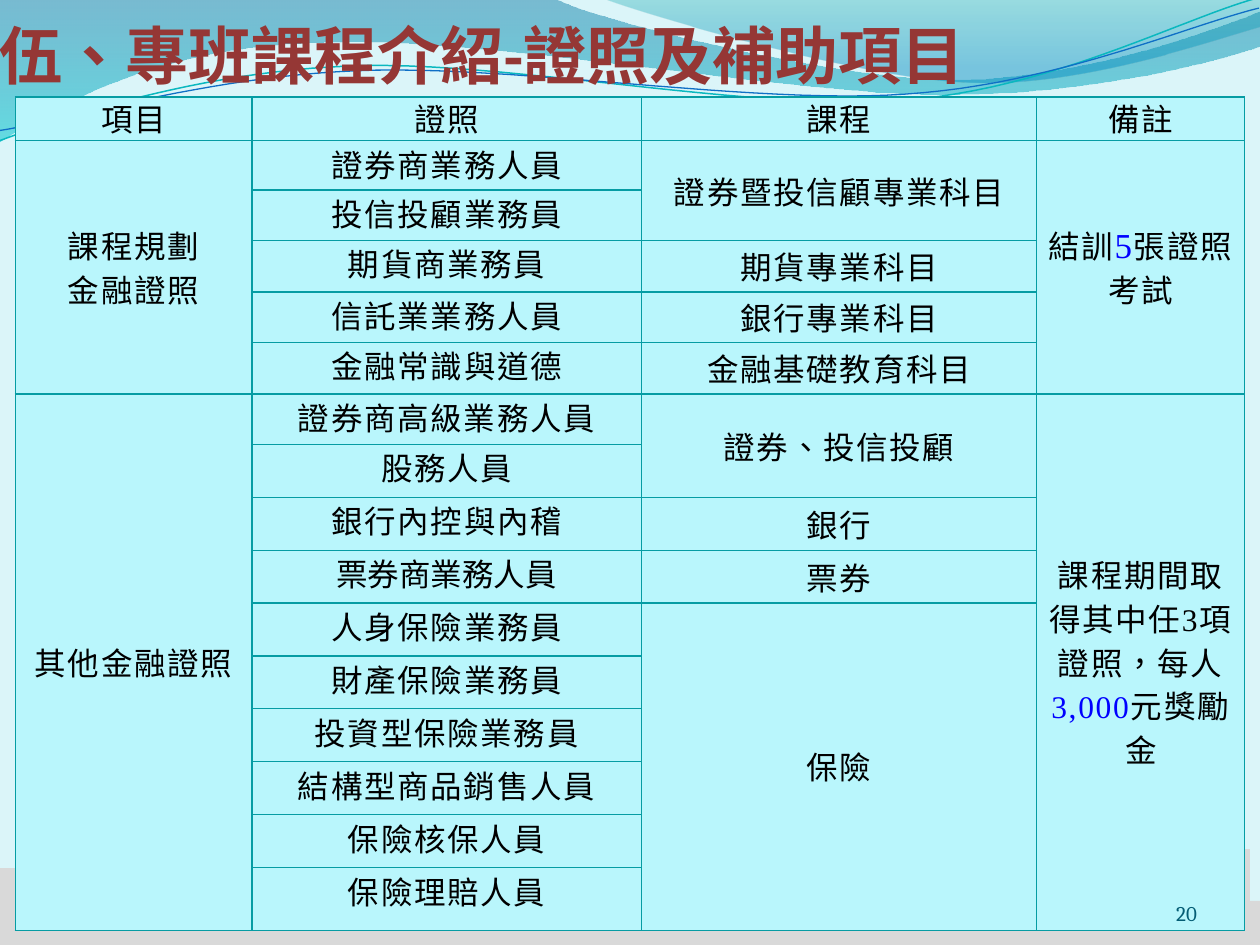
from collections import namedtuple
from dataclasses import dataclass

from lxml import etree
from pptx import Presentation
from pptx.dml.color import RGBColor
from pptx.enum.text import MSO_ANCHOR, PP_ALIGN
from pptx.oxml.ns import qn
from pptx.util import Inches, Pt

Box = namedtuple("Box", "left top width height")
Building = namedtuple("Building", "left roof")


@dataclass(frozen=True)
class Theme:
    background: str = "DBF5F9"
    skyline: str = "D9D9D9"
    title: str = "953735"
    text: str = "000000"
    highlight: str = "0000FF"
    number: str = "045D75"
    cell: str = "B9F6FC"
    border: str = "069CA3"
    title_size: int = 36
    body_size: int = 18
    large_size: int = 20
    number_size: int = 12
    line_spacing: int = 25
    latin: str = "Arial"
    serif: str = "Cambria"
    digits: str = "Times New Roman"
    title_font: str = "Calibri"
    east_asian: str = "Noto Sans CJK SC"


THEME = Theme()

# Wave outlines: a start point, then steps of one point (line) or three (curve)
LARGE_WAVE = [(0, -0.01), [(4.4, -0.01)],
              [(4.76, 0.17), (6.64, 0.63), (7.58, 0.63)],
              [(8.53, 0.63), (9.58, 0.26), (10, 0.09)], [(10.01, 0.36)],
              [(9.83, 0.44), (8.7, 0.76), (7.46, 0.75)],
              [(6.22, 0.75), (3.82, 0.28), (2.57, 0.34)],
              [(1.29, 0.35), (0.46, 0.83), (-0.01, 1.13)]]
SMALL_WAVE = [(4.79, -0.01), [(5.09, 0.11), (6.82, 0.62), (7.69, 0.65)],
              [(8.56, 0.69), (9.61, 0.32), (10, 0.21)], [(10, 0)]]
TEAL_LINE = [(-0.02, 0.88), [(0.48, 0.72), (1.58, 0.41), (2.77, 0.42)],
             [(3.95, 0.42), (5.93, 0.93), (7.13, 0.9)],
             [(8.33, 0.87), (9.38, 0.36), (10, 0.22)]]
BLUE_LINE = [(-0.02, 0.8), [(0.47, 0.75), (1.64, 0.45), (2.83, 0.46)],
             [(4.03, 0.46), (5.97, 0.88), (7.17, 0.85)],
             [(8.36, 0.83), (9.41, 0.42), (10.01, 0.3)]]
# Gradient stops: position in percent, colour, opacity in percent
WAVE_FILLS = [(LARGE_WAVE, [(0, "0074A1", 45), (100, "00C6CF", 55)]),
              (SMALL_WAVE, [(0, "00A1A9", 30), (80, "008BBF", 45)])]
WAVE_LINES = [(TEAL_LINE, "0AB8BF", 0.85), (BLUE_LINE, "0F6FC6", 0.75)]
LINE_TILT = 357.3

# Skyline: every building runs to the left side of the next one
DISTRICT = [Building(*place) for place in (
    (0, 6.89), (0.44, 7.13), (0.51, 6.97), (0.64, 7.18), (1.12, 7.12), (1.47, 7.3),
    (1.78, 7.23), (1.89, 6.91), (1.97, 6.75), (2.21, 7.18), (2.31, 7.26),
    (2.45, 6.76), (2.52, 6.58), (2.62, 6.74))]
CENTRE = [Building(*place) for place in (
    (2.82, 6.92), (3.03, 6.7), (3.44, 6.93), (3.84, 7.03), (4.09, 6.52), (4.29, 6.98),
    (4.46, 6.03), (4.98, 7.12), (5.58, 6.87), (5.9, 6.15), (6.37, 6.87),
    (6.82, 6.48), (7.05, 6.95))]
DISTRICT_REPEAT = 7.1  # the outer district appears again this far to the right
LAST_BUILDING = Building(9.92, 7.15)

# Table content: texts that span rows are (first row, rows, text)
COLUMN_WIDTHS = [1.88, 3.09, 3.14, 1.65]
ROW_HEIGHTS = [0.34, 0.39, 0.4, 0.41, 0.4, 0.41, 0.4] + [0.42] * 8 + [0.5]
HEADERS = ["項目", "證照", "課程", "備註"]
GROUPS = [(1, 5, "課程規劃\n金融證照"), (6, 10, "其他金融證照")]
CERTIFICATES = ["證券商業務人員", "投信投顧業務員", "期貨商業務員", "信託業業務人員",
                "金融常識與道德", "證券商高級業務人員", "股務人員", "銀行內控與內稽",
                "票券商業務人員", "人身保險業務員", "財產保險業務員", "投資型保險業務員",
                "結構型商品銷售人員", "保險核保人員", "保險理賠人員"]
FIRST_SERIF_ROW = 9  # this row also has no letter spacing
COURSES = [(1, 2, "證券暨投信顧專業科目"), (3, 1, "期貨專業科目"), (4, 1, "銀行專業科目"),
           (5, 1, "金融基礎教育科目"), (6, 2, "證券、投信投顧"), (8, 1, "銀行"),
           (9, 1, "票券"), (10, 6, "保險")]


def color(value):
    return RGBColor.from_string(value)


def add_run(paragraph, text, size, font, value, bold=False, spacing=0):
    run = paragraph.add_run()
    run.text = text
    run.font.size, run.font.name, run.font.bold = Pt(size), font, bold
    run.font.color.rgb = color(value)
    properties = run._r.get_or_add_rPr()
    properties.set("lang", "zh-TW")
    properties.set("spc", str(spacing * 100))
    east_asian = etree.Element(qn("a:ea"), typeface=THEME.east_asian)
    properties.find(qn("a:latin")).addnext(east_asian)


def flatten(outline, steps=24):
    """Turn lines and cubic curves into a list of points."""
    points = [outline[0]]
    for segment in outline[1:]:
        if len(segment) == 1:
            points += segment
            continue
        controls = [points[-1], *segment]
        for step in range(1, steps + 1):
            t = step / steps
            weights = [(1 - t) ** 3, 3 * t * (1 - t) ** 2, 3 * t * t * (1 - t), t ** 3]
            points.append(tuple(sum(w * p[axis] for w, p in zip(weights, controls))
                                for axis in (0, 1)))
    return points


def add_outline(slide, box, points, close=True):
    placed = [(box.left + Inches(x), box.top + Inches(y)) for x, y in points]
    builder = slide.shapes.build_freeform(*placed[0])
    builder.add_line_segments(placed[1:], close=close)
    shape = builder.convert_to_shape()
    shape.shadow.inherit = False
    shape.line.fill.background()
    return shape


def set_gradient(shape, stops):
    shape.fill.background()
    no_fill = shape._element.spPr.find(qn("a:noFill"))
    gradient = etree.Element(qn("a:gradFill"), rotWithShape="1")
    stop_list = etree.SubElement(gradient, qn("a:gsLst"))
    for position, value, opacity in stops:
        stop = etree.SubElement(stop_list, qn("a:gs"), pos=str(position * 1000))
        stop_color = etree.SubElement(stop, qn("a:srgbClr"), val=value)
        etree.SubElement(stop_color, qn("a:alpha"), val=str(opacity * 1000))
    etree.SubElement(gradient, qn("a:lin"), ang="5400000", scaled="0")
    no_fill.getparent().replace(no_fill, gradient)


def draw_waves(slide, box):
    for outline, stops in WAVE_FILLS:
        set_gradient(add_outline(slide, box, flatten(outline)), stops)
    for outline, value, width in WAVE_LINES:
        shape = add_outline(slide, box, flatten(outline), close=False)
        shape.fill.background()
        shape.line.color.rgb = color(value)
        shape.line.width = Pt(width)
        shape.rotation = LINE_TILT


def draw_skyline(slide, box):
    repeated = [Building(left + DISTRICT_REPEAT, roof) for left, roof in DISTRICT]
    buildings = DISTRICT + CENTRE + repeated + [LAST_BUILDING]
    right, ground = box.width / Inches(1), box.height / Inches(1)
    ends = [building.left for building in buildings[1:]] + [right]
    points = [(0, ground)]
    for (left, roof), end in zip(buildings, ends):
        points += [(left, roof), (end, roof)]
    skyline = add_outline(slide, box, points + [(right, ground)])
    skyline.fill.solid()
    skyline.fill.fore_color.rgb = color(THEME.skyline)


def draw_label(slide, box, runs, alignment, top_inset=0):
    frame = slide.shapes.add_textbox(*box).text_frame
    frame.word_wrap = True
    frame.vertical_anchor = MSO_ANCHOR.BOTTOM
    frame.margin_left = frame.margin_right = frame.margin_bottom = 0
    frame.margin_top = Inches(top_inset)
    paragraph = frame.paragraphs[0]
    paragraph.alignment = alignment
    for run in runs:
        add_run(paragraph, *run)


def style_cell(cell):
    cell.fill.solid()
    cell.fill.fore_color.rgb = color(THEME.cell)
    properties = cell._tc.get_or_add_tcPr()
    for index, side in enumerate(("a:lnL", "a:lnR", "a:lnT", "a:lnB")):
        line = etree.Element(qn(side), w=str(Pt(0.75)))
        fill = etree.SubElement(line, qn("a:solidFill"))
        etree.SubElement(fill, qn("a:srgbClr"), val=THEME.border)
        properties.insert(index, line)


def fill_cell(cell, lines, exact=True, anchor=MSO_ANCHOR.MIDDLE, spacing=1, margin=0.05):
    """Write lines of (text, size, font, color) runs into a cell."""
    cell.margin_left = cell.margin_right = Inches(margin)
    cell.margin_top = cell.margin_bottom = 0
    cell.vertical_anchor = anchor
    frame = cell.text_frame
    for index, runs in enumerate(lines):
        paragraph = frame.add_paragraph() if index else frame.paragraphs[0]
        paragraph.alignment = PP_ALIGN.CENTER
        if exact:
            paragraph.line_spacing = Pt(THEME.line_spacing)
        for run in runs:
            add_run(paragraph, *run, spacing=spacing)


def body(text, font=THEME.latin, value=THEME.text, size=THEME.body_size):
    return text, size, font, value


def draw_table(slide, box):
    table = slide.shapes.add_table(len(ROW_HEIGHTS), len(COLUMN_WIDTHS), *box).table
    table.first_row = table.horz_banding = False
    for column, width in zip(table.columns, COLUMN_WIDTHS):
        column.width = Inches(width)
    for row, height in zip(table.rows, ROW_HEIGHTS):
        row.height = Inches(height)
    for cell in table.iter_cells():
        style_cell(cell)

    def spanned(row, rows, column):
        if rows > 1:
            table.cell(row, column).merge(table.cell(row + rows - 1, column))
        return table.cell(row, column)

    for column, text in enumerate(HEADERS):
        fill_cell(table.cell(0, column), [[body(text)]])
    for row, rows, text in GROUPS:
        fill_cell(spanned(row, rows, 0), [[body(line)] for line in text.split("\n")])
    for row, text in enumerate(CERTIFICATES, start=1):
        font = THEME.serif if row >= FIRST_SERIF_ROW else THEME.latin
        fill_cell(table.cell(row, 1), [[body(text, font)]], exact=False,
                  anchor=MSO_ANCHOR.TOP, spacing=int(row != FIRST_SERIF_ROW))
    for row, rows, text in COURSES:
        fill_cell(spanned(row, rows, 2), [[body(text)]], exact=rows > 2)
    # Remarks, one for each group
    exams = [body("結訓"), body("5", THEME.digits, THEME.highlight, THEME.large_size),
             body("張證照考試")]
    reward = [body("課程期間取得其中任3項證照，每人", THEME.digits),
              body("3,000", THEME.digits, THEME.highlight), body("元獎勵金", THEME.digits)]
    for (row, rows, _), runs in zip(GROUPS, (exams, reward)):
        fill_cell(spanned(row, rows, 3), [runs], margin=0.07)


def main():
    presentation = Presentation()
    presentation.slide_width, presentation.slide_height = Inches(10), Inches(7.5)
    slide = presentation.slides.add_slide(presentation.slide_layouts[6])
    slide.background.fill.solid()
    slide.background.fill.fore_color.rgb = color(THEME.background)
    page = Box(0, 0, presentation.slide_width, presentation.slide_height)
    draw_waves(slide, page)
    draw_skyline(slide, page)
    title_runs = [(text, THEME.title_size, font, THEME.title, True) for text, font in
                  (("伍、", THEME.east_asian),
                   ("專班課程介紹-證照及補助項目", THEME.title_font))]
    draw_label(slide, Box(0, Inches(-0.27), Inches(9), Inches(1)), title_runs,
               PP_ALIGN.LEFT, top_inset=0.05)
    draw_table(slide, Box(Inches(0.12), Inches(0.77), Inches(9.76), Inches(6.61)))
    draw_label(slide, Box(Inches(8.67), Inches(6.95), Inches(0.83), Inches(0.4)),
               [("20", THEME.number_size, THEME.serif, THEME.number)], PP_ALIGN.RIGHT)
    presentation.save("out.pptx")


if __name__ == "__main__":
    main()
